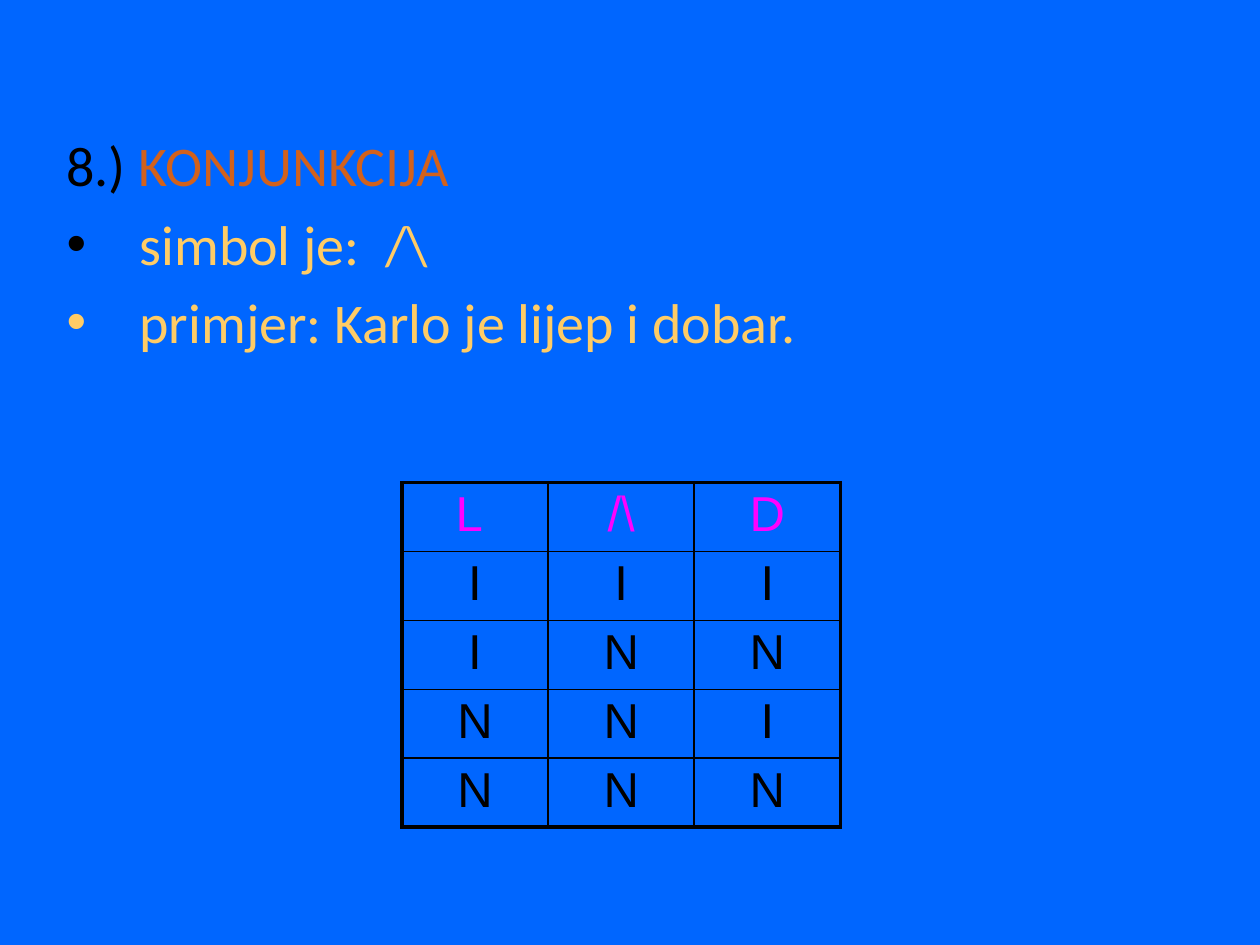
from lxml.etree import SubElement
from pptx import Presentation
from pptx.dml.color import RGBColor
from pptx.enum.text import PP_ALIGN
from pptx.oxml.ns import qn
from pptx.util import Inches, Pt

COLORS = {
    "background": "0066FF",
    "black": "000000",
    "heading": "D2611C",
    "body": "FFCC66",
    "header": "FF00FF",
}


def style_span(span, font, size, color):
    span.font.name = font
    span.font.size = Pt(size)
    span.font.color.rgb = RGBColor.from_string(COLORS[color])


def add_border(cell, side, width):
    line = SubElement(cell._tc.get_or_add_tcPr(), qn(f"a:{side}"), w=str(Pt(width)))
    fill = SubElement(line, qn("a:solidFill"))
    SubElement(fill, qn("a:srgbClr"), val=COLORS["black"])


deck = Presentation()
deck.slide_width = Inches(10)
deck.slide_height = Inches(7.5)
page = deck.slides.add_slide(deck.slide_layouts[6])
page.background.fill.solid()
page.background.fill.fore_color.rgb = RGBColor.from_string(COLORS["background"])

# Heading and bullets: (bullet colour, [(text, colour), ...])
lines = [
    (None, [("8.) ", "black"), ("KONJUNKCIJA", "heading")]),
    ("black", [("simbol je:  /\\", "body")]),
    ("body", [("primjer: Karlo je lijep i dobar.", "body")]),
]
box = page.shapes.add_textbox(Inches(0.43), Inches(0.99), Inches(9), Inches(4.95))
frame = box.text_frame
frame.word_wrap = True
for index, (bullet, spans) in enumerate(lines):
    para = frame.paragraphs[0] if index == 0 else frame.add_paragraph()
    para.space_before = Pt(6.4)
    for text, color in spans:
        span = para.add_run()
        span.text = text
        style_span(span, "Calibri", 32, color)
    properties = para._p.get_or_add_pPr()
    properties.set("marL", str(Inches(0.58)))
    properties.set("indent", str(-Inches(0.58)))
    if bullet:
        bullet_color = SubElement(properties, qn("a:buClr"))
        SubElement(bullet_color, qn("a:srgbClr"), val=COLORS[bullet])
        SubElement(properties, qn("a:buFont"), typeface="Arial")
        SubElement(properties, qn("a:buChar"), char="•")
    else:
        SubElement(properties, qn("a:buNone"))

# Truth table
rows = [
    ["L ", "/\\", "D"],
    ["I", "I", "I"],
    ["I", "N", "N"],
    ["N", "N", "I"],
    ["N", "N", "N"],
]
last_row, last_column = len(rows) - 1, len(rows[0]) - 1
table = page.shapes.add_table(
    len(rows), len(rows[0]), Inches(3.19), Inches(3.83), Inches(3.48), Inches(2.67)
).table
table.first_row = False
table.horz_banding = False
for row_index, row in enumerate(rows):
    for column_index, text in enumerate(row):
        cell = table.cell(row_index, column_index)
        cell.margin_top = cell.margin_bottom = Inches(0.04)
        cell.text_frame.text = text
        para = cell.text_frame.paragraphs[0]
        para.alignment = PP_ALIGN.CENTER
        para.space_before = Pt(5.6)
        style_span(para.runs[0], "Arial", 28, "header" if row_index == 0 else "black")

        # Thick outer frame, thin inner grid
        outer_sides = {
            "lnL": column_index == 0,
            "lnR": column_index == last_column,
            "lnT": row_index == 0,
            "lnB": row_index == last_row,
        }
        for side, is_outer in outer_sides.items():
            add_border(cell, side, 2.25 if is_outer else 1)
        cell.fill.background()

deck.save("out.pptx")
